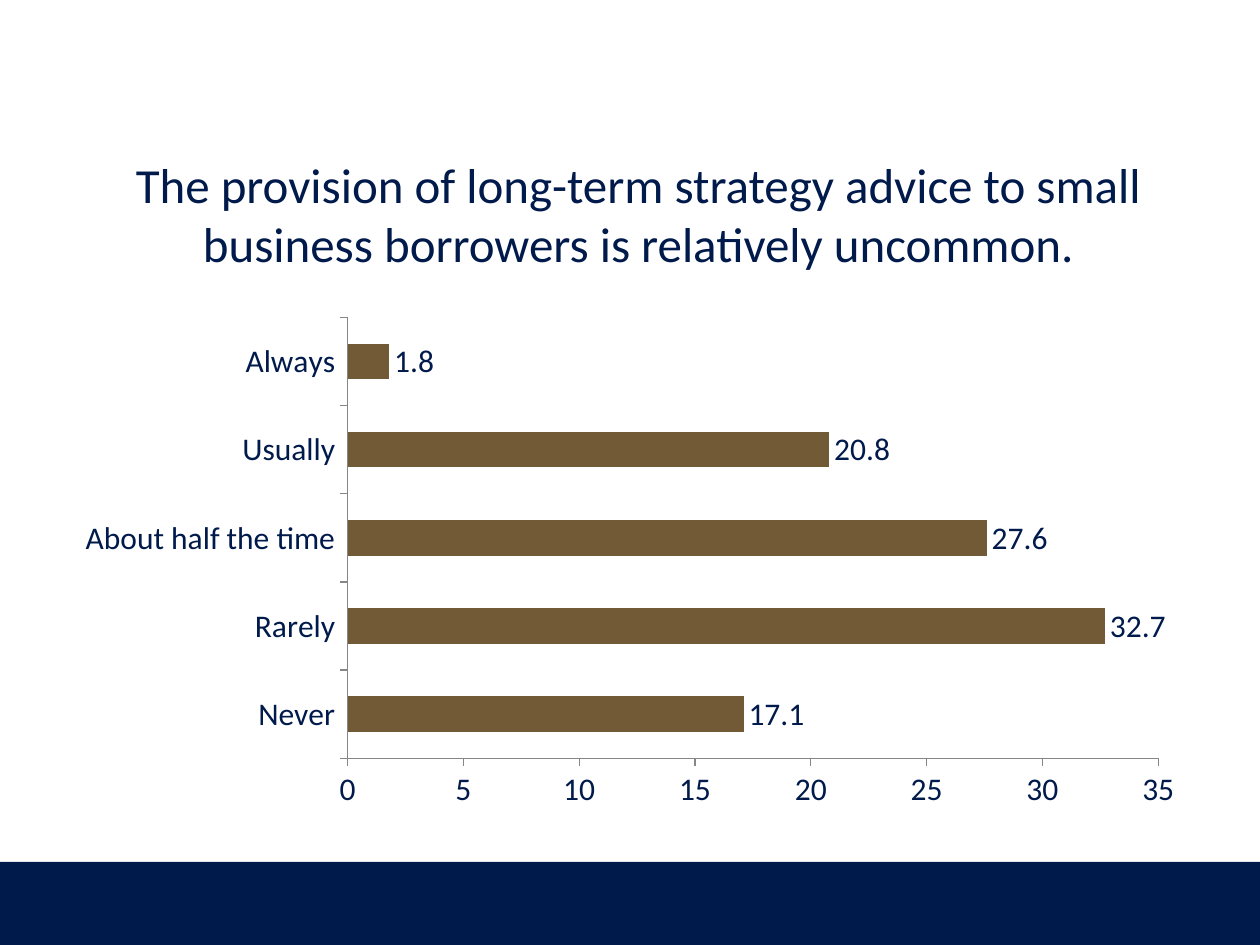
from pptx import Presentation
from pptx.chart.data import CategoryChartData
from pptx.dml.color import RGBColor
from pptx.enum.chart import XL_CHART_TYPE, XL_LABEL_POSITION, XL_TICK_MARK
from pptx.enum.shapes import MSO_SHAPE
from pptx.enum.text import MSO_ANCHOR, PP_ALIGN
from pptx.util import Inches, Pt

NAVY = RGBColor(0x00, 0x1A, 0x4B)
BROWN = RGBColor(0x71, 0x5A, 0x35)
GRAY = RGBColor(0x86, 0x86, 0x86)
FONT = "Calibri"
BAR_CLUSTERED = XL_CHART_TYPE.BAR_CLUSTERED
OUTSIDE_END = XL_LABEL_POSITION.OUTSIDE_END
TICK_OUTSIDE = XL_TICK_MARK.OUTSIDE
TICK_NONE = XL_TICK_MARK.NONE
RECTANGLE = MSO_SHAPE.RECTANGLE
MIDDLE = MSO_ANCHOR.MIDDLE
CENTER = PP_ALIGN.CENTER


def style_font(font, size):
    font.name = FONT
    font.size = Pt(size)
    font.bold = False
    font.color.rgb = NAVY


deck = Presentation()
deck.slide_width = Inches(10)
deck.slide_height = Inches(7.5)
slide = deck.slides.add_slide(deck.slide_layouts[5])

# Footer band
band = slide.shapes.add_shape(
    RECTANGLE, Inches(0), Inches(6.84), Inches(10), Inches(0.66))
band.shadow.inherit = False
band.fill.solid()
band.fill.fore_color.rgb = NAVY
band.line.fill.background()

# Title
title = slide.shapes.title
title.left, title.top = Inches(0.43), Inches(1.07)
title.width, title.height = Inches(9.27), Inches(1.25)
title.text_frame.word_wrap = True
title.text_frame.vertical_anchor = MIDDLE
para = title.text_frame.paragraphs[0]
para.alignment = CENTER
span = para.add_run()
span.text = ("The provision of long-term strategy advice to small "
             "business borrowers is relatively uncommon.")
style_font(span.font, 28)

# Bar chart of how often advice is given
frequencies = CategoryChartData(number_format="#,##0.0")
frequencies.categories = [
    "Never", "Rarely", "About half the time", "Usually", "Always"]
frequencies.add_series("Series 1", [17.1, 32.7, 27.6, 20.8, 1.8])
chart = slide.shapes.add_chart(
    BAR_CLUSTERED, Inches(0.5), Inches(2.44), Inches(9), Inches(4.06),
    frequencies).chart
chart.has_legend = False
chart.has_title = False
style_font(chart.font, 10)

for axis in (chart.category_axis, chart.value_axis):
    axis.has_major_gridlines = False
    axis.major_tick_mark = TICK_OUTSIDE
    axis.minor_tick_mark = TICK_NONE
    axis.format.line.color.rgb = GRAY
    axis.format.line.width = Pt(0.75)
    style_font(axis.tick_labels.font, 18)

value_axis = chart.value_axis
value_axis.minimum_scale = 0
value_axis.maximum_scale = 35
value_axis.major_unit = 5
value_axis.tick_labels.number_format = "0"
value_axis.tick_labels.number_format_is_linked = False

plot = chart.plots[0]
plot.gap_width = 150
plot.vary_by_categories = False
bars = plot.series[0]
bars.format.fill.solid()
bars.format.fill.fore_color.rgb = BROWN

labels = bars.data_labels
labels.show_value = True
labels.position = OUTSIDE_END
labels.number_format = "#,##0.0"
labels.number_format_is_linked = False
style_font(labels.font, 18)

deck.save("out.pptx")
